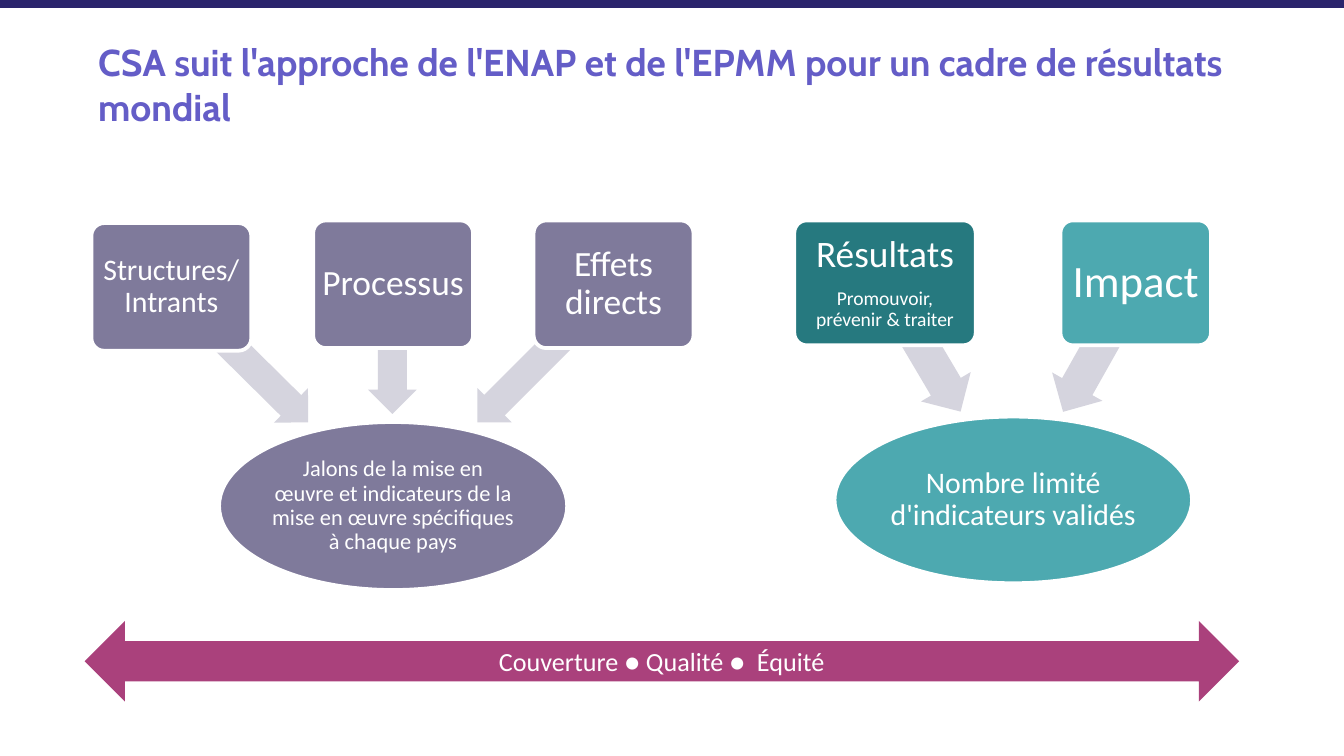
from pptx import Presentation
from pptx import util as u
from pptx.dml.color import RGBColor
from pptx.enum import shapes, text

COLOURS = {
    "navy": "2A246C", "title": "645DC7", "violet": "7F7A9B", "grey": "D5D4DE",
    "teal": "4DA9B0", "dark teal": "26797F", "plum": "AA417C", "white": "FFFFFF",
}
KIND = shapes.MSO_SHAPE

# Each step: label lines with sizes, frame, colour, inset, arrow frame, arrow rotation
COUNTRY_STEPS = [
    ([("Structures/Intrants", 16)], (0.68, 1.66, 1.19, 0.95), "violet", 0.03,
     (1.07, 2.46, 1.43, 0.36), 224.7),
    ([("Processus", 19)], (2.33, 1.64, 1.19, 0.95), "violet", 0.04,
     (2.44, 2.42, 0.96, 0.36), 270),
    ([("Effets directs", 19)], (3.97, 1.64, 1.19, 0.95), "violet", 0.04,
     (3.34, 2.45, 1.45, 0.36), 315),
]
GLOBAL_STEPS = [
    ([("Résultats", 20), ("Promouvoir, prévenir & traiter", 10.5)],
     (5.91, 1.64, 1.35, 0.93), "dark teal", 0.04,
     (6.31, 2.37, 1.11, 0.43), 239.4),
    ([("Impact", 24)], (7.89, 1.64, 1.12, 0.93), "teal", 0.05,
     (7.63, 2.37, 1.1, 0.43), 299.4),
]


def rgb(name):
    return RGBColor.from_string(COLOURS[name])


def place(box, frame):
    box.left, box.top, box.width, box.height = [u.Inches(value) for value in frame]


def write(box, lines, font="Calibri", colour="white", bold=False, inset=0.05,
          align=text.PP_ALIGN.CENTER, anchor=text.MSO_ANCHOR.MIDDLE, spacing=0.9):
    """Fill a shape with (wording, size) paragraphs."""
    body = box.text_frame
    body.word_wrap = True
    body.auto_size = text.MSO_AUTO_SIZE.NONE
    body.vertical_anchor = anchor
    body.margin_left = body.margin_right = u.Inches(inset)
    body.margin_top = body.margin_bottom = u.Inches(inset)
    for index, (wording, size) in enumerate(lines):
        para = body.add_paragraph() if index else body.paragraphs[0]
        para.alignment = align
        para.line_spacing = spacing
        para.space_before = u.Pt(0)
        if index < len(lines) - 1:
            para.space_after = u.Pt(0.35 * size)
        span = para.add_run()
        span.text = wording
        span.font.name = font
        span.font.size = u.Pt(size)
        span.font.bold = bold
        span.font.color.rgb = rgb(colour)


def add_block(page, kind, frame, fill, outlined=False, adjustments=(), rotation=0):
    block = page.shapes.add_shape(kind, *[u.Inches(value) for value in frame])
    block.shadow.inherit = False
    block.fill.solid()
    block.fill.fore_color.rgb = rgb(fill)
    if outlined:
        block.line.color.rgb = rgb("white")
        block.line.width = u.Pt(2)
    else:
        block.line.fill.background()
    for index, value in enumerate(adjustments):
        block.adjustments[index] = value
    block.rotation = rotation
    return block


def add_cluster(page, steps, goal, goal_size, goal_frame, goal_fill):
    """Steps whose arrows all lead to one ellipse."""
    ellipse = add_block(page, KIND.OVAL, goal_frame, goal_fill, outlined=True)
    write(ellipse, [(goal, goal_size)], inset=0.01)
    for lines, frame, fill, inset, arrow_frame, rotation in steps:
        add_block(page, KIND.LEFT_ARROW, arrow_frame, "grey",
                  adjustments=(0.6, 0.5), rotation=rotation)
        step = add_block(page, KIND.ROUNDED_RECTANGLE, frame, fill,
                         outlined=True, adjustments=(0.1,))
        write(step, lines, inset=inset)


def main():
    # Widescreen 16:9 page
    deck = Presentation()
    deck.slide_width = u.Inches(10)
    deck.slide_height = u.Inches(10 * 9 / 16)
    page = deck.slides.add_slide(deck.slide_layouts[5])

    # Top band and title
    add_block(page, KIND.RECTANGLE, (0, 0, 10, 0.06), "navy")
    title = page.shapes.title
    place(title, (0.63, 0.19, 8.7, 0.63))
    write(title,
          [("CSA suit l'approche de l'ENAP et de l'EPMM pour un cadre de résultats mondial", 20)],
          font="Cabin", colour="title", bold=True, inset=0.1, spacing=1.0,
          align=text.PP_ALIGN.LEFT, anchor=text.MSO_ANCHOR.TOP)

    # Country milestones and global indicators
    add_cluster(page, COUNTRY_STEPS,
                "Jalons de la mise en œuvre et indicateurs de la mise en œuvre "
                "spécifiques à chaque pays",
                12, (1.63, 3.14, 2.59, 1.25), "violet")
    add_cluster(page, GLOBAL_STEPS, "Nombre limité d'indicateurs validés",
                16, (6.21, 3.1, 2.66, 1.24), "teal")

    # Cross-cutting arrow
    band = add_block(page, KIND.LEFT_RIGHT_ARROW, (0.63, 4.62, 8.59, 0.6), "plum")
    write(band, [("Couverture ● Qualité ●  Équité", 14)], spacing=1.0)

    deck.save("out.pptx")


if __name__ == "__main__":
    main()
